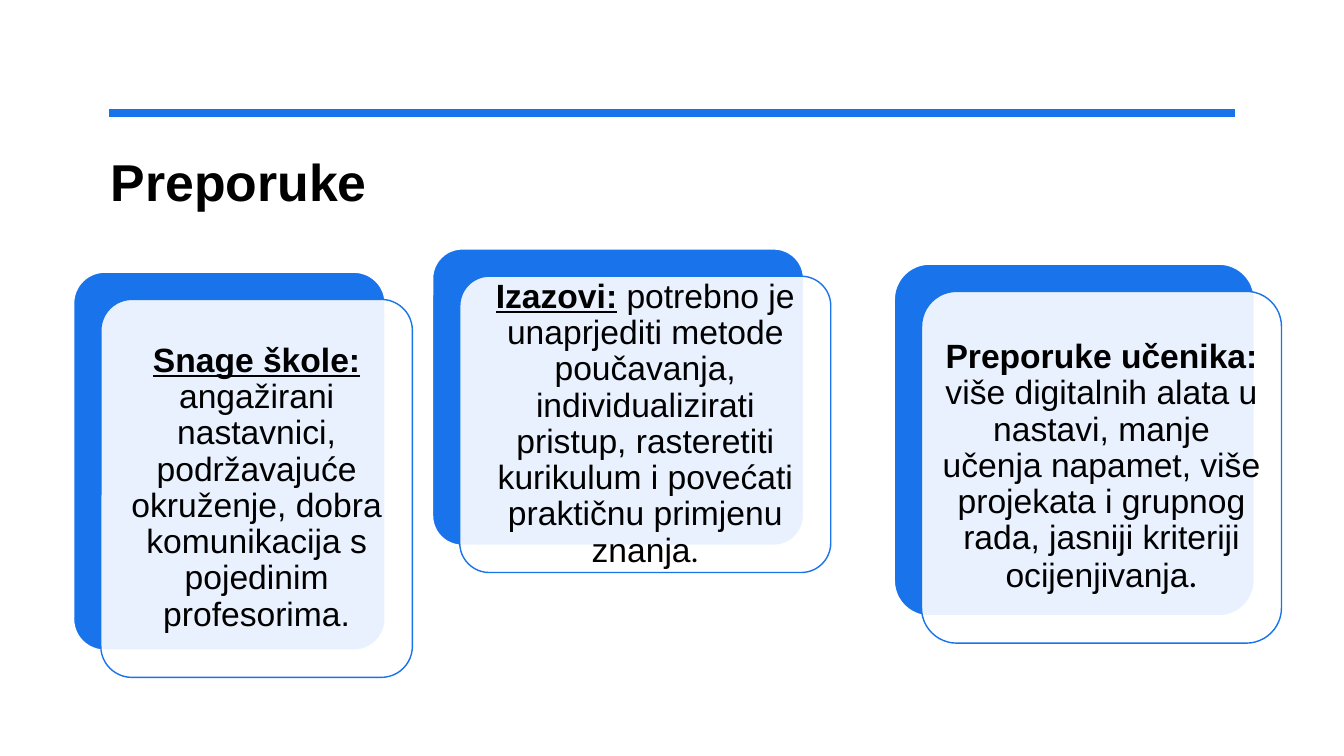
from lxml.etree import SubElement
from pptx import Presentation
from pptx.dml.color import RGBColor
from pptx.enum.shapes import MSO_CONNECTOR, MSO_SHAPE
from pptx.enum.text import MSO_ANCHOR, PP_ALIGN
from pptx.oxml.ns import qn
from pptx.util import Inches, Pt

BLUE = RGBColor(0x19, 0x73, 0xEB)
WHITE = RGBColor(0xFF, 0xFF, 0xFF)
BLACK = RGBColor(0, 0, 0)
OFFSET = 0.27
CORNER = 0.1
INSET_SHARE = 0.029


def add_span(para, text, size=24, font="Arial", bold=False, underline=False):
    span = para.add_run()
    span.text = text
    span.font.size = Pt(size)
    span.font.name = font
    span.font.bold = bold
    span.font.underline = underline
    span.font.color.rgb = BLACK


def add_panel(shapes, left, top, width, height, fill, line):
    panel = shapes.add_shape(MSO_SHAPE.ROUNDED_RECTANGLE, Inches(left), Inches(top),
                             Inches(width), Inches(height))
    panel.adjustments[0] = CORNER
    panel.shadow.inherit = False
    panel.fill.solid()
    panel.fill.fore_color.rgb = fill
    panel.line.color.rgb = line
    panel.line.width = Pt(1)
    return panel


deck = Presentation()
deck.slide_width = Inches(13.33)
deck.slide_height = Inches(7.5)
page = deck.slides.add_slide(deck.slide_layouts[5])

title = page.shapes.title
title.left, title.top, title.width, title.height = [Inches(n) for n in (1, 1.5, 11.33, 1.25)]
title.text_frame.vertical_anchor = MSO_ANCHOR.TOP
title_para = title.text_frame.paragraphs[0]
title_para.alignment = PP_ALIGN.LEFT
title_para.line_spacing = 0.9
add_span(title_para, "Preporuke", size=37, bold=True)

rule = page.shapes.add_connector(MSO_CONNECTOR.STRAIGHT, Inches(1.08), Inches(1.12),
                                 Inches(12.25), Inches(1.12))
rule.line.color.rgb = BLUE
rule.line.width = Pt(6)
SubElement(rule.element.spPr, qn("a:effectLst"))

cards = [
    (0.73, 2.7, 3.09, 3.75, [
        ("Snage škole: ", dict(bold=True, underline=True)),
        ("angažirani nastavnici, podržavajuće okruženje, dobra komunikacija "
         "s pojedinim profesorima.", {}),
    ]),
    (4.29, 2.47, 3.68, 2.94, [
        ("Izazovi:", dict(bold=True, underline=True)),
        (" potrebno je unaprjediti metode poučavanja, individualizirati pristup, "
         "rasteretiti kurikulum i povećati praktičnu primjenu znanja", {}),
        (".", dict(size=23, font="Calibri")),
    ]),
    (8.87, 2.62, 3.57, 3.49, [
        ("Preporuke učenika:", dict(bold=True)),
        (" više digitalnih alata u nastavi, manje učenja napamet, više projekata "
         "i grupnog rada, jasniji kriteriji ocijenjivanja", {}),
        (".", dict(size=25, font="Calibri")),
    ]),
]

for left, top, width, height, spans in cards:
    group = page.shapes.add_group_shape()
    add_panel(group.shapes, left, top, width, height, BLUE, WHITE)
    front = add_panel(group.shapes, left + OFFSET, top + OFFSET, width, height, WHITE, BLUE)
    front_color = front.element.spPr.find(qn("a:solidFill"))[0]
    SubElement(front_color, qn("a:alpha")).set("val", "90000")

    inset = INSET_SHARE * min(width, height)
    box = group.shapes.add_textbox(Inches(left + OFFSET + inset), Inches(top + OFFSET + inset),
                                   Inches(width - 2 * inset), Inches(height - 2 * inset))
    frame = box.text_frame
    frame.word_wrap = True
    frame.vertical_anchor = MSO_ANCHOR.MIDDLE
    frame.margin_left = frame.margin_right = Inches(0.1)
    frame.margin_top = frame.margin_bottom = Inches(0.1)
    para = frame.paragraphs[0]
    para.alignment = PP_ALIGN.CENTER
    para.line_spacing = 0.9
    for text, style in spans:
        add_span(para, text, **style)

deck.save("out.pptx")
